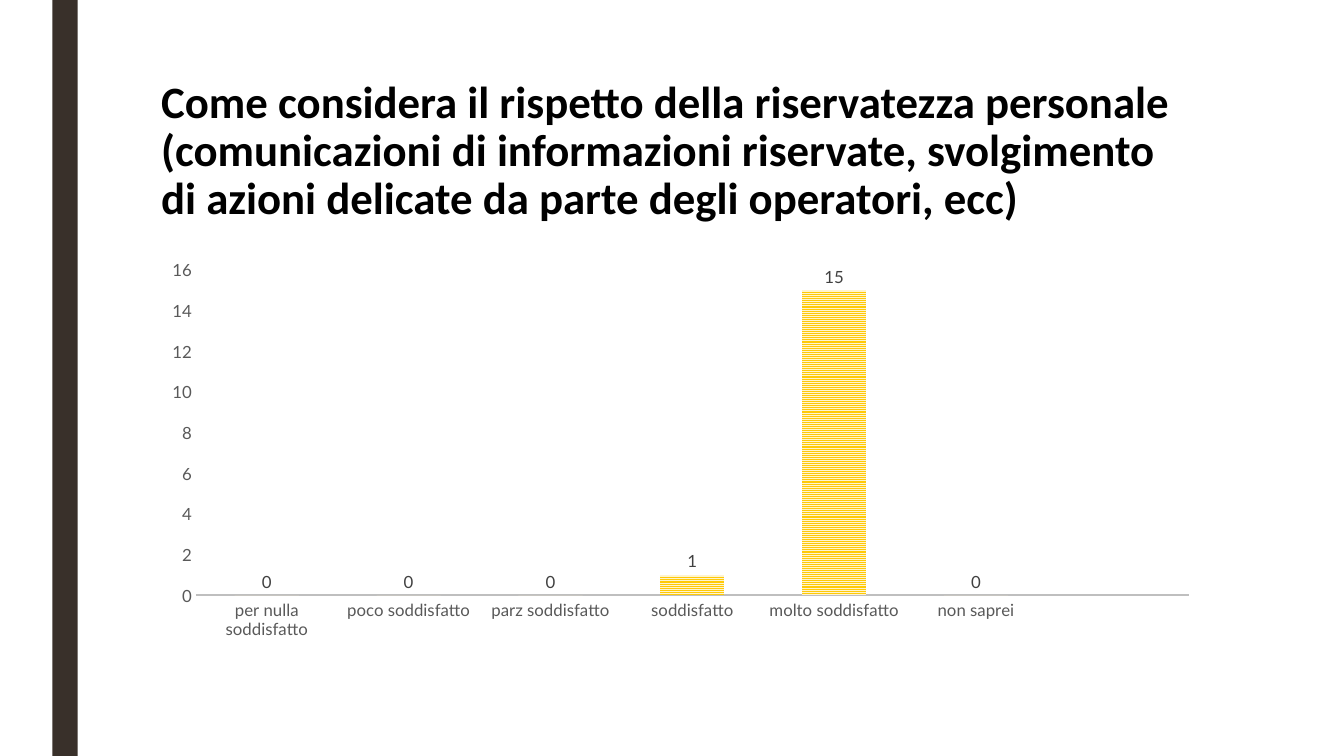
import pptx
import pptx.chart.axis
import pptx.chart.chart
import pptx.chart.data
import pptx.dml.color
import pptx.enum.chart
import pptx.enum.dml
import pptx.enum.text
import pptx.slide
import pptx.text.text
import pptx.util

EMU_PER_PX = 9144  # 100 px to the inch
PAGE_WIDTH, PAGE_HEIGHT = 1333, 750
CONTENT_LEFT, CONTENT_WIDTH = 150, 1050

COLOURS = {
    "band": "39302A",
    "title": "000000",
    "axis text": "595959",
    "axis line": "BFBFBF",
    "label": "404040",
    "stripe": "FFCA08",
    "stripe back": "FFF4CE",
}

TITLE = (
    "Come considera il rispetto della riservatezza personale "
    "(comunicazioni di informazioni riservate, svolgimento "
    "di azioni delicate da parte degli operatori, ecc)"
)
ANSWERS = {
    "per nulla soddisfatto": 0,
    "poco soddisfatto": 0,
    "parz soddisfatto": 0,
    "soddisfatto": 1,
    "molto soddisfatto": 15,
    "non saprei": 0,
    "": None,
}


def px(length: int) -> pptx.util.Emu:
    return pptx.util.Emu(length * EMU_PER_PX)


def colour(name: str) -> pptx.dml.color.RGBColor:
    return pptx.dml.color.RGBColor.from_string(COLOURS[name])


def set_font(font: pptx.text.text.Font, face: str, size: int, colour_name: str, bold: bool = False) -> None:
    font.name = face
    font.size = pptx.util.Pt(size)
    font.bold = bold
    font.color.rgb = colour(colour_name)


def add_side_band(page: pptx.slide.Slide) -> None:
    band = page.shapes.add_shape(
        pptx.enum.shapes.MSO_SHAPE.RECTANGLE, px(52), px(0), px(25), px(PAGE_HEIGHT)
    )
    band.shadow.inherit = False
    band.fill.solid()
    band.fill.fore_color.rgb = colour("band")
    band.line.fill.background()


def add_title(page: pptx.slide.Slide) -> None:
    box = page.shapes.add_textbox(px(CONTENT_LEFT), px(75), px(CONTENT_WIDTH), px(162))
    box.text_frame.word_wrap = True
    box.text_frame.vertical_anchor = pptx.enum.text.MSO_ANCHOR.TOP
    para = box.text_frame.paragraphs[0]
    para.text = TITLE
    para.line_spacing = 0.89
    set_font(para.font, "Calibri", 32, "title", bold=True)


def style_axis(axis: pptx.chart.axis.CategoryAxis | pptx.chart.axis.ValueAxis) -> None:
    axis.has_major_gridlines = False
    axis.major_tick_mark = pptx.enum.chart.XL_TICK_MARK.NONE
    axis.minor_tick_mark = pptx.enum.chart.XL_TICK_MARK.NONE
    set_font(axis.tick_labels.font, "Lato", 12, "axis text")


def style_columns(chart: pptx.chart.chart.Chart) -> None:
    plot = chart.plots[0]
    plot.vary_by_categories = False
    plot.gap_width = 121
    plot.overlap = -22

    fill = plot.series[0].format.fill
    fill.patterned()
    fill.pattern = pptx.enum.dml.MSO_PATTERN.NARROW_HORIZONTAL
    fill.fore_color.rgb = colour("stripe")
    fill.back_color.rgb = colour("stripe back")

    labels = plot.series[0].data_labels
    labels.show_value = True
    labels.position = pptx.enum.chart.XL_LABEL_POSITION.OUTSIDE_END
    set_font(labels.font, "Lato", 12, "label")


def add_answer_chart(page: pptx.slide.Slide) -> None:
    data = pptx.chart.data.CategoryChartData()
    data.categories = list(ANSWERS)
    data.add_series("Series 1", ANSWERS.values())
    chart = page.shapes.add_chart(
        pptx.enum.chart.XL_CHART_TYPE.COLUMN_CLUSTERED,
        px(CONTENT_LEFT), px(250), px(CONTENT_WIDTH), px(392), data,
    ).chart
    chart.has_title = False
    chart.has_legend = False
    set_font(chart.font, "Lato", 10, "title")

    style_axis(chart.category_axis)
    chart.category_axis.format.line.color.rgb = colour("axis line")
    chart.category_axis.format.line.width = pptx.util.Pt(1.5)

    style_axis(chart.value_axis)
    chart.value_axis.format.line.fill.background()
    chart.value_axis.minimum_scale = 0
    chart.value_axis.maximum_scale = 16
    chart.value_axis.major_unit = 2

    style_columns(chart)


def main() -> None:
    deck = pptx.Presentation()
    deck.slide_width, deck.slide_height = px(PAGE_WIDTH), px(PAGE_HEIGHT)
    page = deck.slides.add_slide(deck.slide_layouts[6])
    add_side_band(page)
    add_title(page)
    add_answer_chart(page)
    deck.save("out.pptx")


if __name__ == "__main__":
    main()
